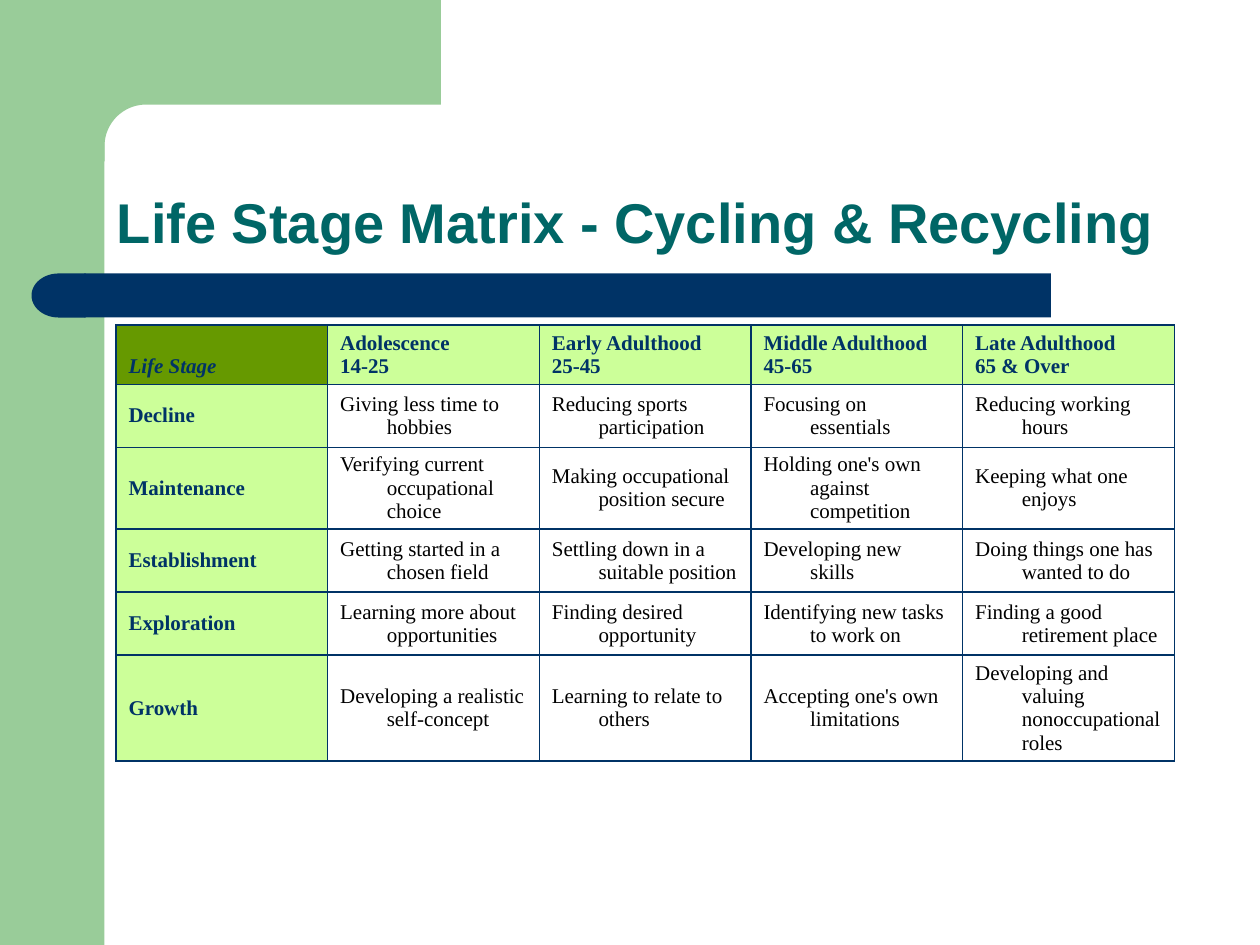
"""Build the life stage matrix slide."""
import math
from dataclasses import dataclass

import lxml.etree
import pptx
import pptx.dml.color
import pptx.enum.shapes
import pptx.enum.text
import pptx.oxml.ns
import pptx.util

Inches = pptx.util.Inches
Pt = pptx.util.Pt
Kind = pptx.enum.shapes.MSO_SHAPE
Anchor = pptx.enum.text.MSO_ANCHOR
qn = pptx.oxml.ns.qn

COLORS = {
    "sage": "99CC99",
    "navy": "003366",
    "teal": "006666",
    "olive": "669900",
    "lime": "CCFF99",
    "black": "000000",
}
ROWS = [
    ["Life Stage", "Adolescence\n14-25", "Early Adulthood\n25-45",
     "Middle Adulthood\n45-65", "Late Adulthood\n65 & Over"],
    ["Decline", "Giving less time to hobbies", "Reducing sports participation",
     "Focusing on essentials", "Reducing working hours"],
    ["Maintenance", "Verifying current occupational choice",
     "Making occupational position secure",
     "Holding one's own against competition", "Keeping what one enjoys"],
    ["Establishment", "Getting started in a chosen field",
     "Settling down in a suitable position", "Developing new skills",
     "Doing things one has wanted to do"],
    ["Exploration", "Learning more about opportunities",
     "Finding desired opportunity", "Identifying new tasks to work on",
     "Finding a good retirement place"],
    ["Growth", "Developing a realistic self-concept",
     "Learning to relate to others", "Accepting one's own limitations",
     "Developing and valuing nonoccupational roles"],
]
HEIGHTS = [0.47, 0.5, 0.65, 0.5, 0.5, 0.84]
WIDTH = 1.68
INDENT = 0.37


@dataclass
class Block:
    """A plain filled shape."""
    kind: Kind
    left: float
    top: float
    width: float
    height: float
    color: str


SIDE = Block(Kind.RECTANGLE, 0, 0, 0.83, 7.5, "sage")
BARS = [
    Block(Kind.RECTANGLE, 0.67, 2.17, 7.67, 0.35, "navy"),
    Block(Kind.FLOWCHART_DELAY, 0.25, 2.17, 0.43, 0.35, "navy"),
]


def tint(name: str) -> pptx.dml.color.RGBColor:
    """Return a named colour."""
    return pptx.dml.color.RGBColor.from_string(COLORS[name])


def paint(shape, color: str) -> None:
    """Give a shape a flat fill with no line or shadow."""
    shape.shadow.inherit = False
    shape.fill.solid()
    shape.fill.fore_color.rgb = tint(color)
    shape.line.fill.background()


def draw_block(slide, block: Block) -> None:
    """Draw one block, with delay shapes facing left."""
    shape = slide.shapes.add_shape(
        block.kind, Inches(block.left), Inches(block.top),
        Inches(block.width), Inches(block.height))
    paint(shape, block.color)
    if block.kind == Kind.FLOWCHART_DELAY:
        shape.rotation = 180


def draw_corner(slide) -> None:
    """Draw the top band with its rounded inner corner."""
    mid, radius, steps = 1.16, 0.33, 24
    turns = [math.pi / 2 * (1 + i / steps) for i in range(steps + 1)]
    curve = [(mid + radius * math.cos(a), mid - radius * math.sin(a))
             for a in turns]
    points = [(3.5, 0.83), *curve, (0.83, 1.28), (0.5, 1.28), (0.5, 0)]
    form = slide.shapes.build_freeform(Inches(3.5), 0)
    form.add_line_segments([(Inches(x), Inches(y)) for x, y in points])
    paint(form.convert_to_shape(), "sage")


def style(part, face: str, size: float, color: str, bold: bool) -> None:
    """Set the font of one paragraph."""
    part.font.name = face
    part.font.size = Pt(size)
    part.font.bold = bold
    part.font.color.rgb = tint(color)


def draw_title(slide) -> None:
    """Draw the slide title."""
    box = slide.shapes.add_textbox(
        Inches(0.83), Inches(0.83), Inches(8.67), Inches(1.25))
    frame = box.text_frame
    frame.word_wrap = True
    frame.vertical_anchor = Anchor.BOTTOM
    part = frame.paragraphs[0]
    part.text = "Life Stage Matrix - Cycling & Recycling"
    part.line_spacing = 0.9
    style(part, "Arial", 32, "teal", True)


def edge_cell(cell) -> None:
    """Put a thin navy line on each side of a cell."""
    props = cell._tc.get_or_add_tcPr()
    for side in ("lnL", "lnR", "lnT", "lnB"):
        line = lxml.etree.SubElement(props, qn(f"a:{side}"), w=str(Pt(1)))
        fill = lxml.etree.SubElement(line, qn("a:solidFill"))
        lxml.etree.SubElement(fill, qn("a:srgbClr"), val=COLORS["navy"])


def place_text(cell, row: int, first: bool) -> None:
    """Set the anchor and the upright margins of a cell."""
    if first:
        cell.vertical_anchor, top, bottom = Anchor.BOTTOM, 0.05, 0.05
    elif row == 0:
        cell.vertical_anchor, top, bottom = Anchor.TOP, 0.05, 0
    else:
        cell.vertical_anchor, top, bottom = Anchor.MIDDLE, 0.02, 0.02
    cell.margin_top = Inches(top)
    cell.margin_bottom = Inches(bottom)


def fill_cell(cell, text: str, row: int, col: int) -> None:
    """Write and style one cell by its place in the grid."""
    head = row == 0 or col == 0
    first = row == 0 and col == 0
    edge_cell(cell)
    if head:
        cell.fill.solid()
        cell.fill.fore_color.rgb = tint("olive" if first else "lime")
    else:
        cell.fill.background()
    place_text(cell, row, first)
    cell.text = text
    for part in cell.text_frame.paragraphs:
        style(part, "Times New Roman", 12, "navy" if head else "black", head)
        part.font.italic = first
        props = part._p.get_or_add_pPr()
        props.set("marL", str(Inches(INDENT)))
        props.set("indent", str(Inches(-INDENT)))


def draw_table(slide) -> None:
    """Draw the matrix of stages and ages."""
    count = len(ROWS[0])
    table = slide.shapes.add_table(
        len(ROWS), count, Inches(0.92), Inches(2.58),
        Inches(WIDTH * count), Inches(sum(HEIGHTS))).table
    table.first_row = False
    table.horz_banding = False
    for column in table.columns:
        column.width = Inches(WIDTH)
    for row, texts in enumerate(ROWS):
        table.rows[row].height = Inches(HEIGHTS[row])
        for col, text in enumerate(texts):
            fill_cell(table.cell(row, col), text, row, col)


def main() -> None:
    """Build and save the slide."""
    deck = pptx.Presentation()
    deck.slide_width = Inches(10)
    deck.slide_height = Inches(7.5)
    slide = deck.slides.add_slide(deck.slide_layouts[6])
    draw_block(slide, SIDE)
    draw_corner(slide)
    for bar in BARS:
        draw_block(slide, bar)
    draw_title(slide)
    draw_table(slide)
    deck.save("out.pptx")


if __name__ == "__main__":
    main()
